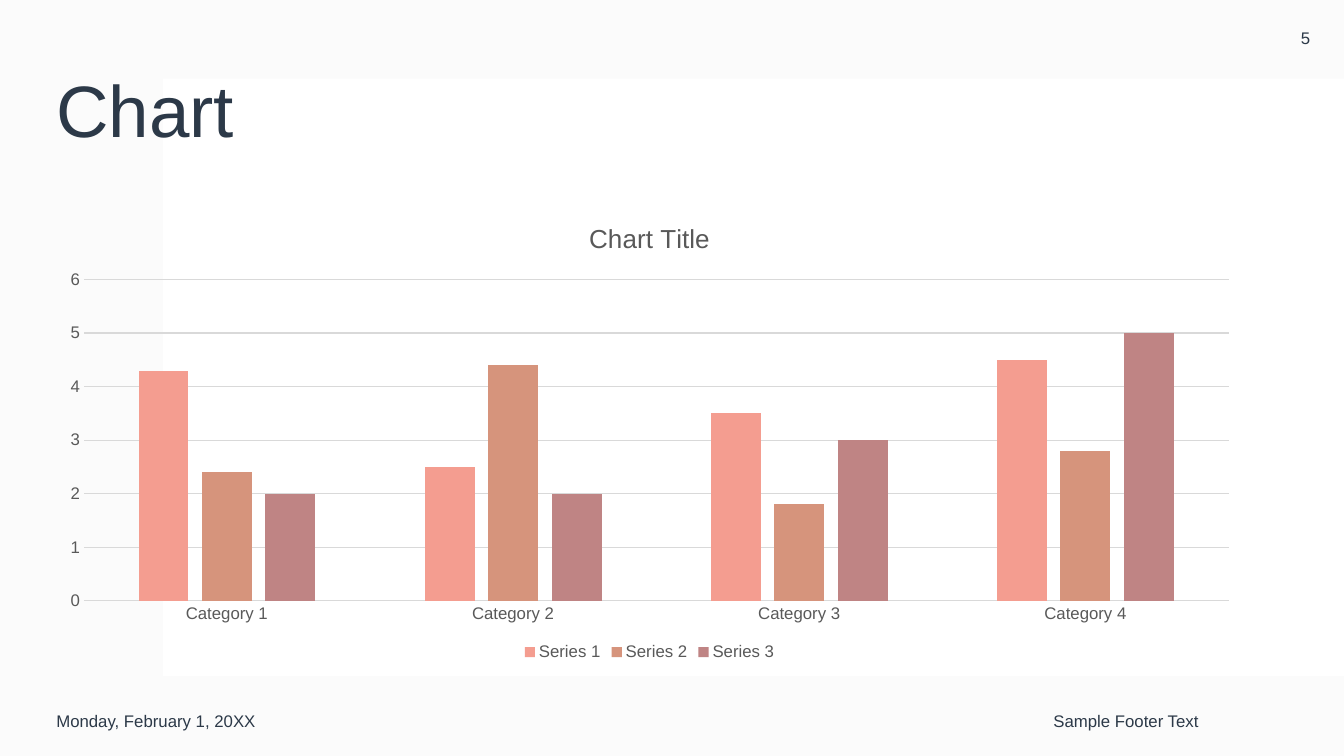
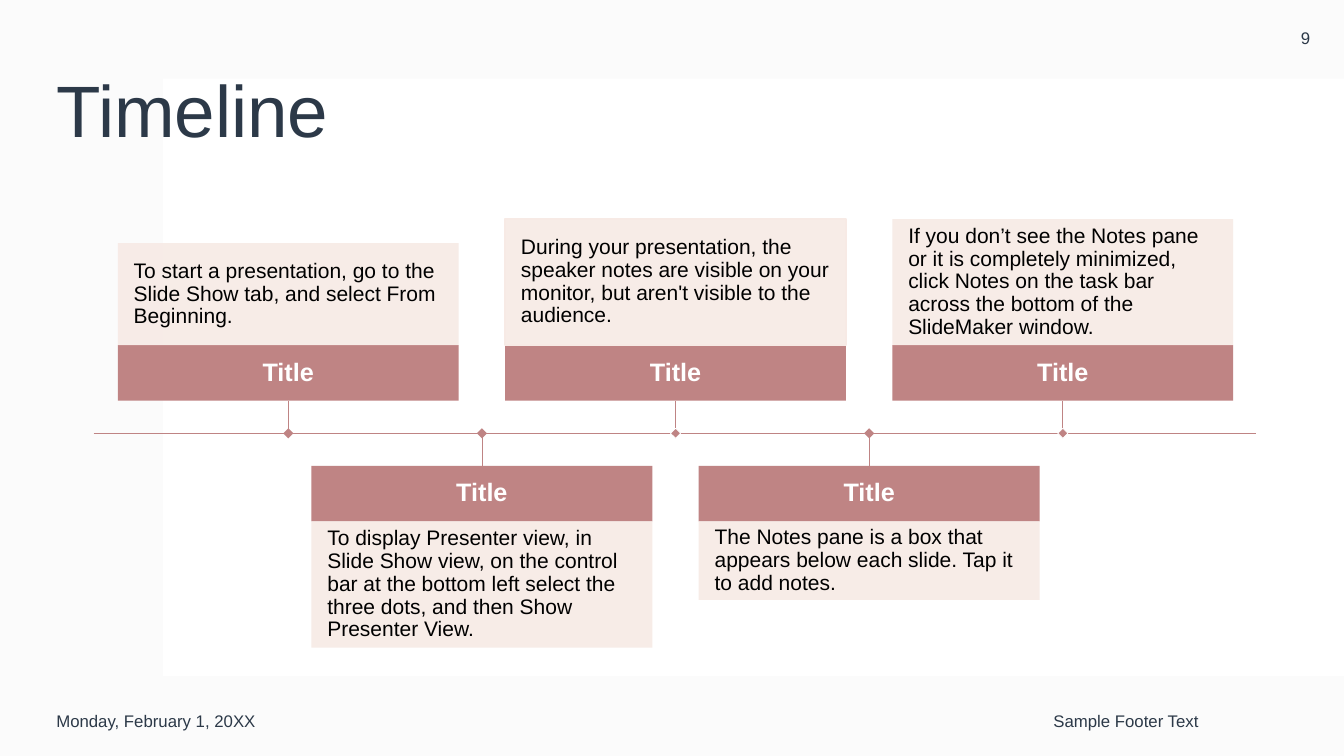
from lxml import etree
from pptx import Presentation
from pptx.chart.data import CategoryChartData
from pptx.dml.color import RGBColor
from pptx.enum.chart import XL_CHART_TYPE, XL_LEGEND_POSITION, XL_TICK_MARK
from pptx.enum.shapes import MSO_CONNECTOR, MSO_SHAPE
from pptx.enum.text import MSO_ANCHOR, PP_ALIGN
from pptx.oxml.ns import qn
from pptx.util import Cm, Pt

RECTANGLE = MSO_SHAPE.RECTANGLE
STRAIGHT = MSO_CONNECTOR.STRAIGHT
MIDDLE = MSO_ANCHOR.MIDDLE
LEFT, CENTER, RIGHT = PP_ALIGN.LEFT, PP_ALIGN.CENTER, PP_ALIGN.RIGHT
COLUMNS = XL_CHART_TYPE.COLUMN_CLUSTERED
LEGEND_BOTTOM = XL_LEGEND_POSITION.BOTTOM
NO_TICK = XL_TICK_MARK.NONE

FONT = "Arial"
COLORS = {
    "navy": "2C3948", "black": "000000", "white": "FFFFFF",
    "backdrop": "F4F4F4", "rose": "BF8484", "blush": "F7EAE5",
    "coral": "F49D90", "clay": "D6947C", "gray": "595959", "grid": "D9D9D9",
}
SLIDE_WIDTH, SLIDE_HEIGHT = 33.87, 19.05


class Deck:
    """Holds the shared style and the slide being built."""

    def __init__(self):
        self.presentation = Presentation()
        self.presentation.slide_width = Cm(SLIDE_WIDTH)
        self.presentation.slide_height = Cm(SLIDE_HEIGHT)
        self.slide = None

    def color(self, name):
        return RGBColor.from_string(COLORS[name])

    def new_slide(self, title, number):
        layout = self.presentation.slide_layouts[6]
        self.slide = self.presentation.slides.add_slide(layout)
        self.rectangle(0, 0, SLIDE_WIDTH, SLIDE_HEIGHT, "backdrop", alpha=35)
        self.rectangle(4.11, 1.98, SLIDE_WIDTH - 4.11, 15.06, "white")
        self.text(1.17, 1.02, 29.29, 3.68, title, 52, spacing=0.9)
        self.text(1.17, 17.27, 7.62, 1.78, "Monday, February 1, 20XX", 12)
        self.text(10.46, 17.27, 20, 1.78, "Sample Footer Text", 12, align=RIGHT)
        self.text(31.95, 0, 1.9, 1.9, number, 12, align=CENTER)

    def rectangle(self, left, top, width, height, fill, alpha=None, outline=None, weight=1):
        shape = self.slide.shapes.add_shape(
            RECTANGLE, Cm(left), Cm(top), Cm(width), Cm(height))
        shape.shadow.inherit = False
        shape.fill.solid()
        shape.fill.fore_color.rgb = self.color(fill)
        if alpha:
            tint = shape._element.spPr.find(qn("a:solidFill")).find(qn("a:srgbClr"))
            etree.SubElement(tint, qn("a:alpha")).set("val", str(alpha * 1000))
        if outline:
            shape.line.color.rgb = self.color(outline)
            shape.line.width = Pt(weight)
        else:
            shape.line.fill.background()
        return shape

    def text(self, left, top, width, height, words, size, **style):
        box = self.slide.shapes.add_textbox(Cm(left), Cm(top), Cm(width), Cm(height))
        self.set_text(box, words, size, **style)

    def set_text(self, shape, words, size, color="navy", align=LEFT, bold=False,
                 spacing=1.0, inset=0.25):
        frame = shape.text_frame
        frame.text = words
        frame.word_wrap = True
        frame.vertical_anchor = MIDDLE
        frame.margin_left = frame.margin_right = Cm(inset)
        frame.margin_top = frame.margin_bottom = Cm(inset)
        paragraph = frame.paragraphs[0]
        paragraph.alignment = align
        paragraph.line_spacing = spacing
        self.font(paragraph.runs[0].font, size, color, bold)

    def font(self, font, size, color, bold=False):
        font.name = FONT
        font.size = Pt(size)
        font.bold = bold
        font.color.rgb = self.color(color)

    def line(self, start, end, weight):
        (x1, y1), (x2, y2) = start, end
        connector = self.slide.shapes.add_connector(STRAIGHT, Cm(x1), Cm(y1), Cm(x2), Cm(y2))
        connector.line.color.rgb = self.color("rose")
        connector.line.width = Pt(weight)
        etree.SubElement(connector._element.spPr, qn("a:effectLst"))

    def marker(self, x, y, outline=None):
        size = 0.18
        diamond = self.rectangle(x - size / 2, y - size / 2, size, size, "rose",
                                 outline=outline, weight=0.5)
        diamond.rotation = 45

    def event(self, left, axis, above, height, description, outline, marker_outline):
        width, title_height, stem = 8.59, 1.4, 0.82
        center = left + width / 2
        if above:
            title_top = axis - stem - title_height
            description_top = title_top - height
            stem_end = axis - stem
        else:
            title_top = stem_end = axis + stem
            description_top = title_top + title_height
        heading = self.rectangle(left, title_top, width, title_height, "rose")
        self.set_text(heading, "Title", 18, "white", CENTER, True, 0.9)
        body = self.rectangle(left, description_top, width, height, "blush", 90, outline)
        self.set_text(body, description, 15, "black", spacing=0.9, inset=0.4)
        self.line((center, stem_end), (center, axis), 0.5)
        self.marker(center, axis, marker_outline)

    def column_chart(self, left, top, width, height, title, categories, series):
        data = CategoryChartData()
        data.categories = categories
        for name, values, _ in series:
            data.add_series(name, values)
        chart = self.slide.shapes.add_chart(
            COLUMNS, Cm(left), Cm(top), Cm(width), Cm(height), data).chart
        self.font(chart.font, 12, "gray")
        chart.has_title = True
        heading = chart.chart_title.text_frame
        heading.text = title
        self.font(heading.paragraphs[0].runs[0].font, 18.6, "gray")
        chart.has_legend = True
        chart.legend.position = LEGEND_BOTTOM
        chart.legend.include_in_layout = False

        plot = chart.plots[0]
        plot.gap_width = 219
        plot.overlap = -27
        plot.vary_by_categories = False
        for columns, (_, _, fill) in zip(plot.series, series):
            columns.format.fill.solid()
            columns.format.fill.fore_color.rgb = self.color(fill)

        for axis in (chart.category_axis, chart.value_axis):
            axis.major_tick_mark = axis.minor_tick_mark = NO_TICK
        scale = chart.value_axis
        scale.minimum_scale, scale.maximum_scale, scale.major_unit = 0, 6, 1
        scale.format.line.fill.background()
        scale.has_major_gridlines = True
        for rule in (chart.category_axis.format.line, scale.major_gridlines.format.line):
            rule.color.rgb = self.color("grid")
            rule.width = Pt(0.75)


def build_chart(deck):
    deck.new_slide("Chart", "5")
    deck.column_chart(
        1.17, 5.08, 30.4, 11.68, "Chart Title",
        [f"Category {number}" for number in range(1, 5)],
        [("Series 1", (4.3, 2.5, 3.5, 4.5), "coral"),
         ("Series 2", (2.4, 4.4, 1.8, 2.8), "clay"),
         ("Series 3", (2, 2, 3, 5), "rose")])


def build_timeline(deck):
    deck.new_slide("Timeline", "9")
    axis, first_left, pitch = 10.92, 2.97, 4.88
    events = [
        (2.57, "To start a presentation, go to the Slide Show tab, and select "
               "From Beginning.", None, None),
        (3.18, "To display Presenter view, in Slide Show view, on the control bar at the "
               "bottom left select the three dots, and then Show Presenter View.", None, None),
        (3.18, "During your presentation, the speaker notes are visible on your monitor, "
               "but aren't visible to the audience.", "blush", "white"),
        (1.98, "The Notes pane is a box that appears below each slide. Tap it to add notes.",
         None, None),
        (3.18, "If you don’t see the Notes pane or it is completely minimized, click Notes "
               "on the task bar across the bottom of the SlideMaker window.", None, "white"),
    ]
    deck.line((2.36, axis), (31.65, axis), 1)
    for index, (height, description, outline, marker_outline) in enumerate(events):
        deck.event(first_left + index * pitch, axis, index % 2 == 0, height,
                   description, outline, marker_outline)


def main():
    deck = Deck()
    build_chart(deck)
    build_timeline(deck)
    deck.presentation.save("out.pptx")


if __name__ == "__main__":
    main()
